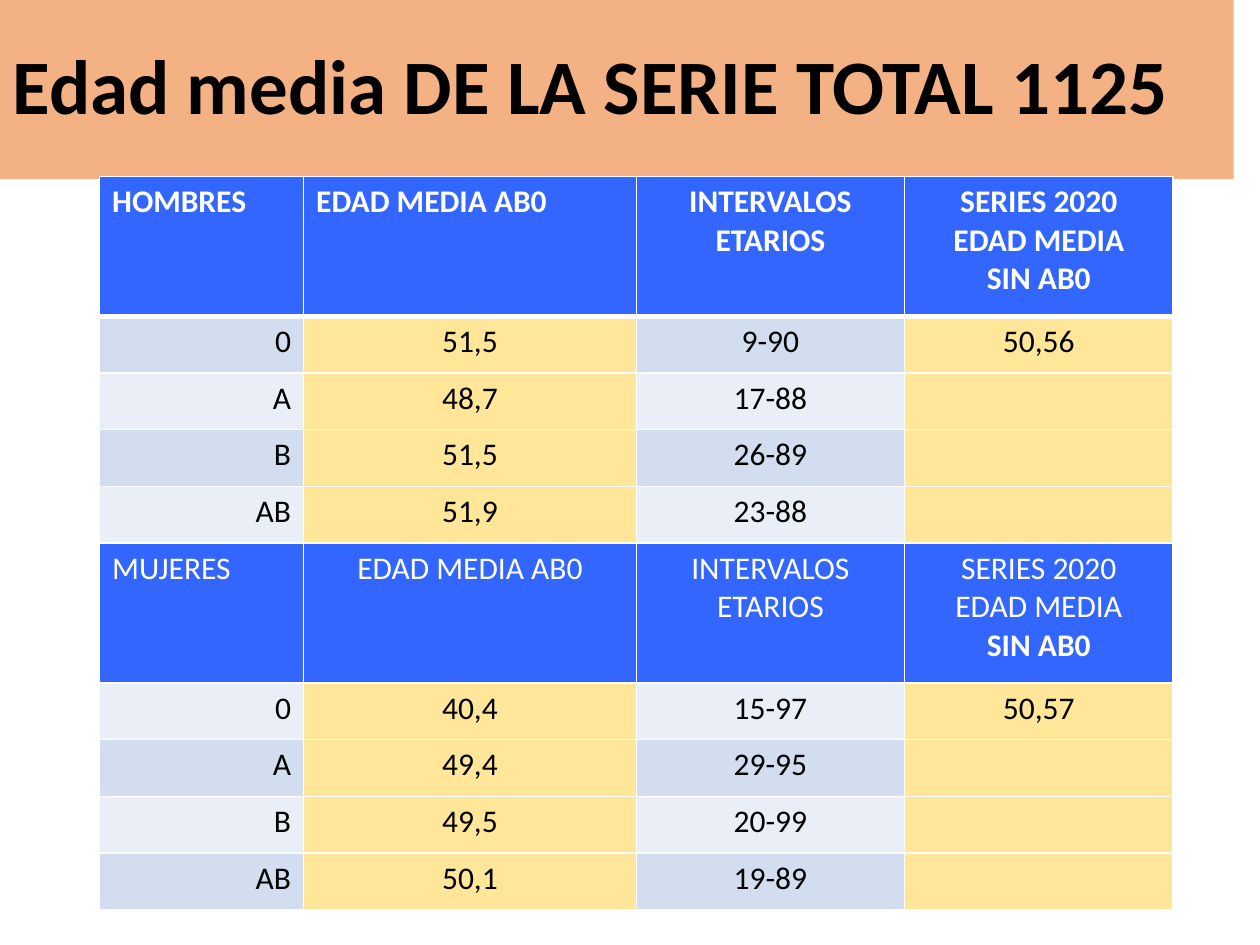
from pptx import Presentation
from pptx.dml.color import RGBColor
from pptx.enum.text import MSO_ANCHOR, MSO_AUTO_SIZE, PP_ALIGN
from pptx.oxml.ns import qn
from pptx.util import Inches, Pt
from lxml.etree import SubElement

TITLE = "Edad media DE LA SERIE TOTAL 1125"

# Each heading is a list of paragraphs; each paragraph is a (text, bold) pair.
MEN = {
    "headings": [
        [("HOMBRES", True)],
        [("EDAD MEDIA AB0", True)],
        [("INTERVALOS ETARIOS", True)],
        [("SERIES 2020\nEDAD MEDIA\nSIN AB0", True)],
    ],
    "heading_aligns": [PP_ALIGN.LEFT, PP_ALIGN.LEFT, PP_ALIGN.CENTER, PP_ALIGN.CENTER],
    "groups": [
        ("0", "51,5", "9-90", "50,56"),
        ("A", "48,7", "17-88", ""),
        ("B", "51,5", "26-89", ""),
        ("AB", "51,9", "23-88", ""),
    ],
}
WOMEN = {
    "headings": [
        [("MUJERES", False)],
        [("EDAD MEDIA AB0", False)],
        [("INTERVALOS ETARIOS", False)],
        [("SERIES 2020\nEDAD MEDIA", False), ("SIN AB0", True)],
    ],
    "heading_aligns": [PP_ALIGN.LEFT] + [PP_ALIGN.CENTER] * 3,
    "groups": [
        ("0", "40,4", "15-97", "50,57"),
        ("A", "49,4", "29-95", ""),
        ("B", "49,5", "20-99", ""),
        ("AB", "50,1", "19-89", ""),
    ],
}
GROUP_ALIGNS = [PP_ALIGN.RIGHT] + [PP_ALIGN.CENTER] * 3

COLUMN_WIDTHS = [1.62, 2.64, 2.13, 2.13]
HEADING_HEIGHT, GROUP_HEIGHT = 1.11, 0.45
MEAN_AGE_COLUMNS = (1, 3)

THEME = {
    "font": "Calibri",
    "title_size": 44,
    "table_size": 18,
    "title_fill": "F4B183",
    "heading_fill": "3366FF",
    "mean_fill": "FFE699",
    "bands": ("EAEFF7", "D2DEEF"),
    "dark": "000000",
    "light": "FFFFFF",
    "border": 1,
    "first_heading_border": 3,
}


def add_run(paragraph, text, size, color, bold):
    """Add one run, or one per line where the text holds line breaks."""
    for number, line in enumerate(text.split("\n")):
        if number:
            paragraph.add_line_break()
        run = paragraph.add_run()
        run.text = line
        run.font.name = THEME["font"]
        run.font.size = Pt(size)
        run.font.bold = bold
        run.font.color.rgb = RGBColor.from_string(color)


def set_borders(cell, top, bottom):
    properties = cell._tc.get_or_add_tcPr()
    widths = {"lnL": THEME["border"], "lnR": THEME["border"], "lnT": top, "lnB": bottom}
    for side, width in widths.items():
        line = SubElement(properties, qn(f"a:{side}"), w=str(Pt(width)))
        SubElement(SubElement(line, qn("a:solidFill")), qn("a:srgbClr"), val=THEME["light"])


def fill_cell(cell, paragraphs, align, color, fill, top, bottom):
    set_borders(cell, top, bottom)
    cell.fill.solid()
    cell.fill.fore_color.rgb = RGBColor.from_string(fill)
    for number, (text, bold) in enumerate(paragraphs):
        paragraph = cell.text_frame.add_paragraph() if number else cell.text_frame.paragraphs[0]
        paragraph.alignment = align
        if text:
            add_run(paragraph, text, THEME["table_size"], color, bold)


def add_title(slide):
    title = slide.shapes.title
    title.left, title.top, title.width, title.height = map(Inches, (0, 0, 9.79, 1.42))
    title.fill.solid()
    title.fill.fore_color.rgb = RGBColor.from_string(THEME["title_fill"])
    frame = title.text_frame
    frame.word_wrap = True
    frame.auto_size = MSO_AUTO_SIZE.NONE
    frame.vertical_anchor = MSO_ANCHOR.MIDDLE
    paragraph = frame.paragraphs[0]
    paragraph.alignment = PP_ALIGN.LEFT
    paragraph.line_spacing = 0.9
    add_run(paragraph, TITLE, THEME["title_size"], THEME["dark"], True)


def add_age_table(slide):
    rows = []
    for section in (MEN, WOMEN):
        rows.append((True, section["headings"], section["heading_aligns"]))
        for group in section["groups"]:
            rows.append((False, [[(value, False)] for value in group], GROUP_ALIGNS))
    heights = [HEADING_HEIGHT if heading else GROUP_HEIGHT for heading, _, _ in rows]

    table = slide.shapes.add_table(
        len(rows), len(COLUMN_WIDTHS), Inches(0.79), Inches(1.4),
        Inches(sum(COLUMN_WIDTHS)), Inches(sum(heights)),
    ).table
    for column, width in zip(table.columns, COLUMN_WIDTHS):
        column.width = Inches(width)

    for r, (heading, contents, aligns) in enumerate(rows):
        table.rows[r].height = Inches(heights[r])
        top = THEME["first_heading_border"] if r == 1 else THEME["border"]
        bottom = THEME["first_heading_border"] if r == 0 else THEME["border"]
        color = THEME["light"] if heading else THEME["dark"]
        for c, (paragraphs, align) in enumerate(zip(contents, aligns)):
            if heading:
                fill = THEME["heading_fill"]
            elif c in MEAN_AGE_COLUMNS:
                fill = THEME["mean_fill"]
            else:
                fill = THEME["bands"][r % 2]
            fill_cell(table.cell(r, c), paragraphs, align, color, fill, top, bottom)


def main():
    presentation = Presentation()
    presentation.slide_width, presentation.slide_height = Inches(10), Inches(7.5)
    slide = presentation.slides.add_slide(presentation.slide_layouts.get_by_name("Title Only"))
    add_title(slide)
    add_age_table(slide)
    presentation.save("out.pptx")


if __name__ == "__main__":
    main()
